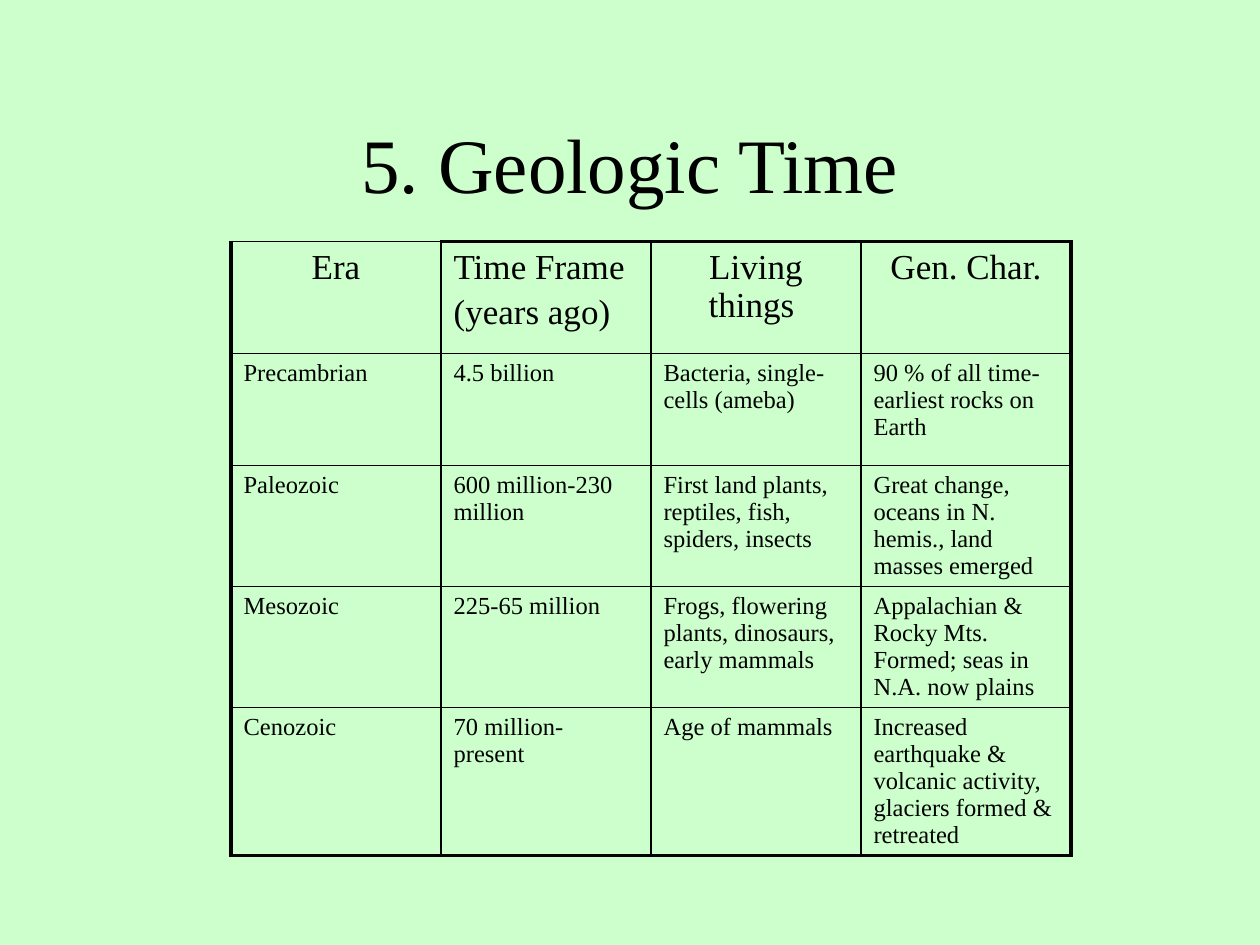
from lxml import etree
from pptx import Presentation
from pptx.dml.color import RGBColor
from pptx.enum.text import MSO_ANCHOR, MSO_AUTO_SIZE, PP_ALIGN
from pptx.oxml.ns import qn
from pptx.util import Pt

CENTER, LEFT = PP_ALIGN.CENTER, PP_ALIGN.LEFT
MIDDLE, NO_FIT = MSO_ANCHOR.MIDDLE, MSO_AUTO_SIZE.NONE

# Content: a line break in a cell starts a new paragraph
TITLE = "5. Geologic Time"
ROWS = [
    ("Era", "Time Frame\n(years ago)", "Living things ", "Gen. Char."),
    ("Precambrian", "4.5 billion", "Bacteria, single-cells (ameba)",
     "90 % of all time-earliest rocks on Earth"),
    ("Paleozoic", "600 million-230 million",
     "First land plants, reptiles, fish, spiders, insects",
     "Great change, oceans in N. hemis., land masses emerged"),
    ("Mesozoic", "225-65 million",
     "Frogs, flowering plants, dinosaurs, early mammals",
     "Appalachian & Rocky Mts. Formed; seas in N.A. now plains"),
    ("Cenozoic", "70 million- present", "Age of mammals",
     "Increased earthquake & volcanic activity, glaciers formed & retreated"),
]
HEADER_ALIGNMENTS = (CENTER, LEFT, CENTER, CENTER)

# Format, lengths in points
BACKGROUND, INK = "CCFFCC", "000000"
FONT = "Times New Roman"
TITLE_SIZE, HEADER_SIZE, BODY_SIZE = 44, 20, 14
TITLE_BOX = {"left": 54, "top": 48, "width": 612, "height": 90}
TABLE_LEFT, TABLE_TOP, COLUMN_WIDTH, ROW_HEIGHT = 132, 138, 120, 64
THIN, THICK = 1, 2.25


def color(hex_value):
    return RGBColor.from_string(hex_value)


def write(paragraph, text, size, alignment, space_before=0):
    paragraph.text = text
    paragraph.alignment = alignment
    paragraph.space_before = Pt(space_before)
    for name, value in {"name": FONT, "size": Pt(size)}.items():
        setattr(paragraph.font, name, value)
    paragraph.font.color.rgb = color(INK)


def set_borders(cell, widths):
    properties = cell._tc.get_or_add_tcPr()
    for side, width in widths.items():
        line = etree.SubElement(properties, qn(f"a:{side}"), w=str(Pt(width)))
        fill = etree.SubElement(line, qn("a:solidFill"))
        etree.SubElement(fill, qn("a:srgbClr"), val=INK)


presentation = Presentation()
presentation.slide_width, presentation.slide_height = Pt(720), Pt(540)
slide = presentation.slides.add_slide(presentation.slide_layouts[5])
slide.background.fill.solid()
slide.background.fill.fore_color.rgb = color(BACKGROUND)

# Title
title = slide.shapes.title
for name, value in TITLE_BOX.items():
    setattr(title, name, Pt(value))
title.text_frame.auto_size = NO_FIT
title.text_frame.vertical_anchor = MIDDLE
write(title.text_frame.paragraphs[0], TITLE, TITLE_SIZE, CENTER)

# Table of eras
row_count, column_count = len(ROWS), len(ROWS[0])
table = slide.shapes.add_table(
    row_count, column_count, Pt(TABLE_LEFT), Pt(TABLE_TOP),
    Pt(COLUMN_WIDTH * column_count), Pt(ROW_HEIGHT * row_count)).table
table.first_row = table.horz_banding = False

for row, texts in enumerate(ROWS):
    size = BODY_SIZE if row else HEADER_SIZE
    for column, text in enumerate(texts):
        cell = table.cell(row, column)
        # Thick outer frame, except above the first header
        set_borders(cell, {
            "lnL": THICK if column == 0 else THIN,
            "lnR": THICK if column == column_count - 1 else THIN,
            "lnT": THICK if row == 0 and column > 0 else THIN,
            "lnB": THICK if row == row_count - 1 else THIN,
        })
        cell.fill.background()
        alignment = LEFT if row else HEADER_ALIGNMENTS[column]
        for index, line in enumerate(text.split("\n")):
            frame = cell.text_frame
            paragraph = frame.add_paragraph() if index else frame.paragraphs[0]
            write(paragraph, line, size, alignment, 0.2 * size if index else 0)

presentation.save("out.pptx")
